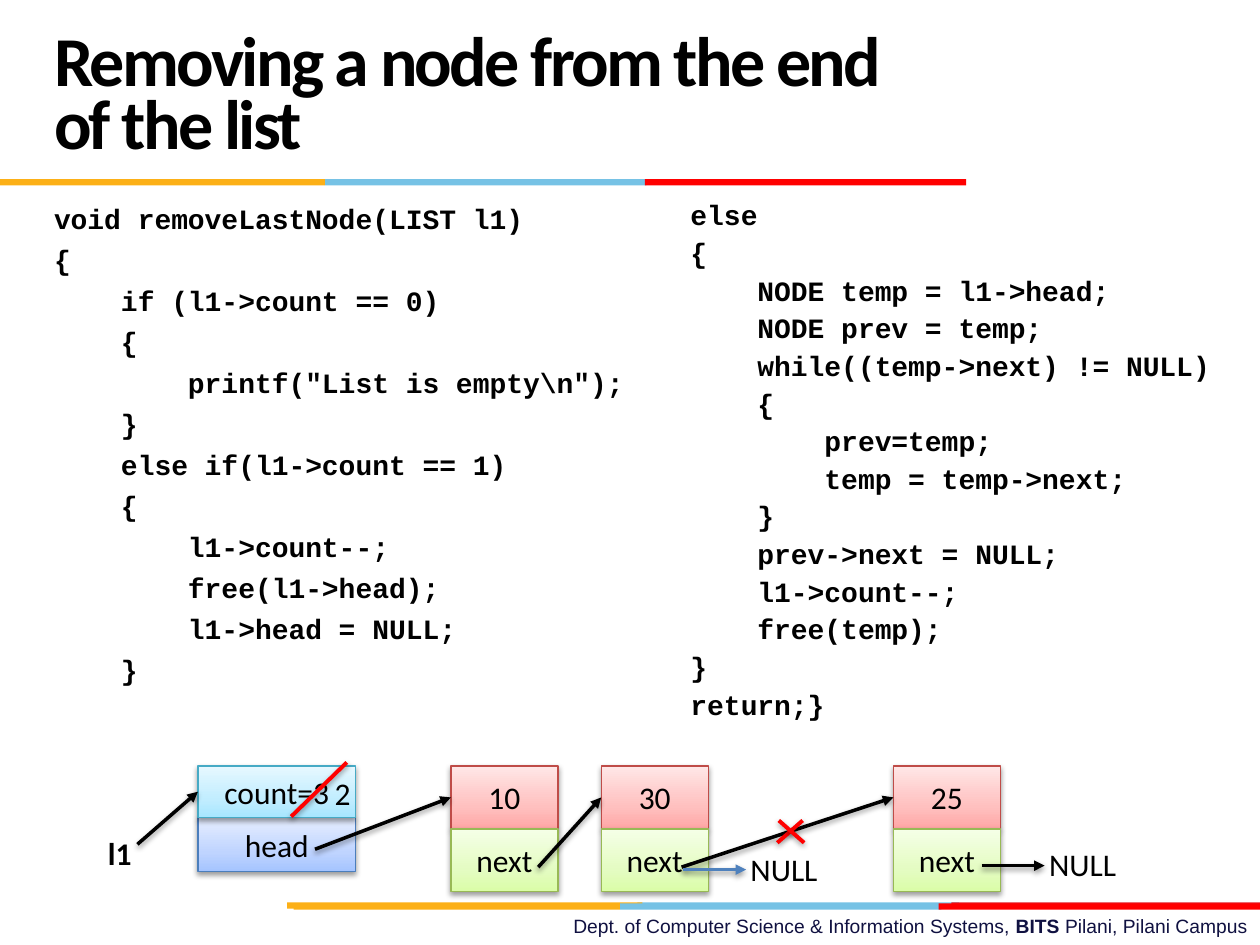
from dataclasses import dataclass
from typing import Optional

from lxml import etree
from pptx import Presentation
from pptx.dml.color import RGBColor
from pptx.enum.shapes import MSO_CONNECTOR, MSO_SHAPE
from pptx.enum.text import MSO_ANCHOR, PP_ALIGN
from pptx.oxml import parse_xml
from pptx.oxml.ns import nsdecls, qn
from pptx.util import Cm, Pt

RECT = MSO_SHAPE.RECTANGLE
STRAIGHT = MSO_CONNECTOR.STRAIGHT
LEFT, CENTER, RIGHT = PP_ALIGN.LEFT, PP_ALIGN.CENTER, PP_ALIGN.RIGHT
TOP, MIDDLE = MSO_ANCHOR.TOP, MSO_ANCHOR.MIDDLE
LEFT_SIDE = 1


@dataclass(frozen=True)
class Theme:
    black: str = "000000"
    navy: str = "101141"
    amber: str = "FCB017"
    sky: str = "76C2E5"
    crimson: str = "E31C24"
    red: str = "FF0000"
    blue: str = "4F81BD"
    body: str = "Calibri"
    code: str = "Courier New"
    footer: str = "Arial"
    title_size: float = 40
    label_size: float = 18
    code_size: float = 16
    footer_size: float = 11
    code_gap: float = 4.25


@dataclass(frozen=True)
class CellStyle:
    stops: tuple[str, str, str]
    border: str


@dataclass(frozen=True)
class Cell:
    text: str
    x: float
    y: float
    w: float
    h: float
    style: CellStyle


@dataclass(frozen=True)
class Link:
    x1: float
    y1: float
    x2: float
    y2: float
    color: str
    width: float = 2
    arrow: bool = True
    target: Optional[str] = None


@dataclass(frozen=True)
class Label:
    text: str
    x: float
    y: float
    w: float
    align: PP_ALIGN = LEFT
    bold: bool = False


@dataclass(frozen=True)
class Bar:
    x: float
    y: float
    w: float
    color: str


T = Theme()
DATA = CellStyle(("FFA6A5", "FFC0BF", "FFE7E7"), "BF4C48")
NEXT = CellStyle(("DAFDA7", "E4FCC2", "F5FFE7"), "98B955")
HEAD = CellStyle(("A4C4FF", "BFD4FF", "E6EEFF"), "4B7EBC")
COUNT = CellStyle(("A7E6FF", "C1EDFF", "E7F8FF"), "46AAC5")

BARS = [
    Bar(12.85, 18.19, 6.48, T.sky), Bar(19.18, 18.19, 6.22, T.crimson),
    Bar(5.79, 18.19, 7.16, T.amber),
    Bar(12.5, 18.21, 6.48, T.sky), Bar(5.92, 18.21, 6.58, T.amber),
    Bar(18.92, 18.21, 6.48, T.red),
    Bar(6.55, 3.61, 6.48, T.sky), Bar(0, 3.61, 6.55, T.amber),
    Bar(13, 3.61, 6.48, T.red),
]

NODE_W, NODE_H, LIST_TOP = 2.16, 1.27, 15.44
NODES = [("10", 9.09), ("30", 12.12), ("25", 18.01)]
CELLS = [
    Cell("head", 3.99, 16.48, 3.18, 1.09, HEAD),
    Cell("count=3", 3.99, LIST_TOP, 3.18, 1.04, COUNT),
]
for value, node_x in NODES:
    CELLS += [
        Cell(value, node_x, LIST_TOP, NODE_W, NODE_H, DATA),
        Cell("next", node_x, LIST_TOP + NODE_H, NODE_W, NODE_H, NEXT),
    ]

LINKS = [
    Link(19.79, 17.45, 21.06, 17.45, T.black),
    Link(13.74, 17.48, 18.01, 16.08, T.black, target="25"),
    Link(6.35, 17.12, 9.09, 16.08, T.black, target="10"),
    Link(16.18, 16.54, 15.67, 16.99, T.red, 2.25, False),
    Link(16.21, 16.99, 15.7, 16.54, T.red, 2.25, False),
    Link(6.99, 15.37, 5.87, 16.46, T.red, 2.25, False),
    Link(10.85, 17.48, 12.12, 16.08, T.black, target="30"),
    Link(2.77, 17.02, 3.99, 15.96, T.black, target="count=3"),
    Link(13.77, 17.53, 15.04, 17.53, T.blue),
]

LABELS = [
    Label("NULL", 20.9, 16.92, 1.96),
    Label("NULL", 14.88, 17.02, 1.96),
    Label("2", 6.25, 15.47, 1.32, CENTER),
    Label("l1", 0.74, 16.69, 3.35, CENTER, True),
]

LEFT_CODE = r"""void removeLastNode(LIST l1)
{
    if (l1->count == 0)
    {
        printf("List is empty\n");
    }
    else if(l1->count == 1)
    {
        l1->count--;
        free(l1->head);
        l1->head = NULL;
    }"""

RIGHT_CODE = """    else
    {
        NODE temp = l1->head;
        NODE prev = temp;
        while((temp->next) != NULL)
        {
            prev=temp;
            temp = temp->next;
        }
        prev->next = NULL;
        l1->count--;
        free(temp);
    }
    return;}"""


def set_font(p, name: str, size: float, color: str, bold: Optional[bool] = False) -> None:
    f = p.font
    f.name, f.size, f.bold = name, Pt(size), bold
    f.color.rgb = RGBColor.from_string(color)


def add_shadow(effects) -> None:
    effects.append(parse_xml(
        f'<a:outerShdw {nsdecls("a")} blurRad="40000" dist="20000" dir="5400000" rotWithShape="0">'
        '<a:srgbClr val="000000"><a:alpha val="38000"/></a:srgbClr></a:outerShdw>'))


def add_bar(s, bar: Bar) -> None:
    sp = s.shapes.add_shape(RECT, Cm(bar.x), Cm(bar.y), Cm(bar.w), Cm(0.13))
    sp.shadow.inherit = False
    sp.fill.solid()
    sp.fill.fore_color.rgb = RGBColor.from_string(bar.color)
    sp.line.fill.background()


def add_text(s, x: float, y: float, w: float, h: float, anchor: MSO_ANCHOR = TOP):
    tf = s.shapes.add_textbox(Cm(x), Cm(y), Cm(w), Cm(h)).text_frame
    tf.word_wrap = True
    tf.vertical_anchor = anchor
    return tf


def add_code(s, code: str, x: float, w: float, h: float, spacing: float) -> None:
    tf = add_text(s, x, 3.94, w, h)
    for i, line in enumerate(code.split("\n")):
        p = tf.add_paragraph() if i else tf.paragraphs[0]
        p.text = line
        p.line_spacing = spacing
        p.space_before = Pt(T.code_gap if i else 0)
        set_font(p, T.code, T.code_size, T.black, True)


def add_cell(s, cell: Cell):
    sp = s.shapes.add_shape(RECT, Cm(cell.x), Cm(cell.y), Cm(cell.w), Cm(cell.h))
    sp.fill.gradient()
    sp.fill.gradient_angle = 90
    stops = sp._element.spPr.find(qn("a:gradFill")).find(qn("a:gsLst"))
    for old in list(stops):
        stops.remove(old)
    for pos, color in zip((0, 35, 100), cell.style.stops):
        gs = etree.SubElement(stops, qn("a:gs"), pos=str(pos * 1000))
        etree.SubElement(gs, qn("a:srgbClr"), val=color)
    sp.line.color.rgb = RGBColor.from_string(cell.style.border)
    sp.line.width = Pt(0.75)
    sp.shadow.inherit = False
    add_shadow(sp._element.spPr.find(qn("a:effectLst")))
    tf = sp.text_frame
    tf.vertical_anchor = MIDDLE
    p = tf.paragraphs[0]
    p.text, p.alignment = cell.text, CENTER
    set_font(p, T.body, T.label_size, T.black)
    return sp


def add_link(s, link: Link, cells: dict) -> None:
    c = s.shapes.add_connector(STRAIGHT, Cm(link.x1), Cm(link.y1), Cm(link.x2), Cm(link.y2))
    if link.target:
        c.end_connect(cells[link.target], LEFT_SIDE)
    c.line.color.rgb = RGBColor.from_string(link.color)
    c.line.width = Pt(link.width)
    spPr = c._element.spPr
    if link.arrow:
        etree.SubElement(spPr.find(qn("a:ln")), qn("a:tailEnd"), type="triangle")
    add_shadow(etree.SubElement(spPr, qn("a:effectLst")))


def add_label(s, label: Label) -> None:
    p = add_text(s, label.x, label.y, label.w, 1.02).paragraphs[0]
    p.text, p.alignment = label.text, label.align
    set_font(p, T.body, T.label_size, T.black, label.bold)


def add_title(s) -> None:
    p = add_text(s, 0.84, 0.43, 17.58, 3.18, MIDDLE).paragraphs[0]
    r = p.add_run()
    r.text = "Removing a node from the end of the list"
    r._r.get_or_add_rPr().set("spc", "-150")
    p.line_spacing = Pt(36)
    set_font(p, T.body, T.title_size, T.black, True)


def add_footer(s) -> None:
    p = add_text(s, 0, 18.31, 25.4, 0.74).paragraphs[0]
    p.alignment = RIGHT
    for text, bold in (("Dept. of Computer Science & Information Systems, ", False),
                       ("BITS ", True), ("Pilani, Pilani Campus", False)):
        r = p.add_run()
        r.text, r.font.bold = text, bold
    set_font(p, T.footer, T.footer_size, T.navy, None)


def main() -> None:
    prs = Presentation()
    prs.slide_width, prs.slide_height = Cm(25.4), Cm(19.05)
    s = prs.slides.add_slide(prs.slide_layouts[6])
    for bar in BARS:
        add_bar(s, bar)
    add_footer(s)
    add_code(s, LEFT_CODE, 0.84, 12.9, 10.36, 1.0)
    add_title(s)
    cells = {cell.text: add_cell(s, cell) for cell in CELLS}
    for link in LINKS:
        add_link(s, link, cells)
    for label in LABELS:
        add_label(s, label)
    add_code(s, RIGHT_CODE, 12.32, 13.08, 11.3, 0.9)
    prs.save("out.pptx")


if __name__ == "__main__":
    main()
